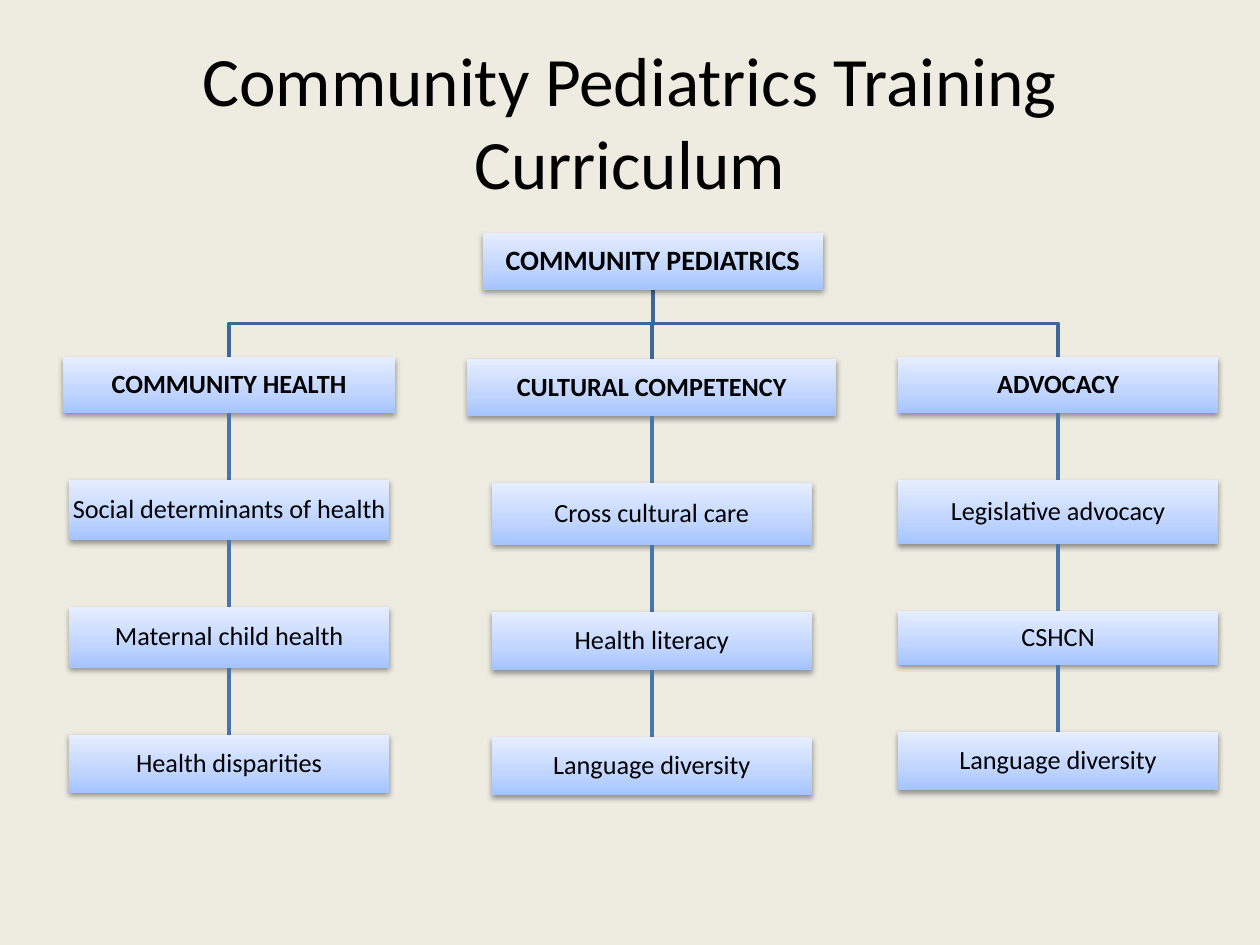
from dataclasses import dataclass

from lxml import etree
from pptx import Presentation
from pptx.dml.color import RGBColor
from pptx.enum.shapes import MSO_CONNECTOR as Link, MSO_SHAPE as Preset
from pptx.enum.text import MSO_ANCHOR as Anchor, PP_ALIGN as Align
from pptx.oxml import parse_xml
from pptx.oxml.ns import nsdecls, qn
from pptx.util import Cm, Pt


@dataclass(frozen=True)
class Theme:
    font: str = "Calibri"
    paper: str = "EEECE1"
    ink: str = "000000"
    branch: str = "3F6797"
    spine: str = "4875AC"
    gradient: tuple = ((0, "A4C4FF"), (35, "BFD4FF"), (100, "E6EEFF"))
    title_size: float = 39.6
    root_size: float = 16
    box_size: float = 15
    line_width: float = 2


class Chart:
    """Draws the parts of an organisation chart; lengths are in centimetres."""

    def __init__(self, page, theme):
        self.page, self.theme = page, theme
        page.background.fill.solid()
        page.background.fill.fore_color.rgb = RGBColor.from_string(theme.paper)

    def label(self, shape, text, size, bold=False, spacing=1.0, inset=None):
        frame = shape.text_frame
        settings = {"word_wrap": True, "vertical_anchor": Anchor.MIDDLE}
        if inset is not None:
            for side in ("left", "right", "top", "bottom"):
                settings[f"margin_{side}"] = Cm(inset)
        para = frame.paragraphs[0]
        span = para.add_run()
        formats = (
            (frame, settings),
            (para, {"alignment": Align.CENTER, "line_spacing": spacing}),
            (span, {"text": text}),
            (span.font, {"name": self.theme.font, "size": Pt(size), "bold": bold}),
            (span.font.color, {"rgb": RGBColor.from_string(self.theme.ink)}),
        )
        for target, values in formats:
            for name, value in values.items():
                setattr(target, name, value)

    def title(self, text, left, top, width, height):
        box = self.page.shapes.add_textbox(Cm(left), Cm(top), Cm(width), Cm(height))
        self.label(box, text, self.theme.title_size)

    def box(self, text, center, top, width, height, size, bold=False):
        box = self.page.shapes.add_shape(
            Preset.RECTANGLE, Cm(center - width / 2), Cm(top), Cm(width), Cm(height))
        box.line.fill.background()
        box.shadow.inherit = False
        self.shade(box)
        self.label(box, text, size, bold, spacing=0.9, inset=0.03)

    def shade(self, box):
        """Fill with the three-stop gradient and add a soft shadow below."""
        stops = "".join(
            f'<a:gs pos="{place * 1000}"><a:srgbClr val="{color}"/></a:gs>'
            for place, color in self.theme.gradient)
        properties = box.element.spPr
        properties.find(qn("a:prstGeom")).addnext(parse_xml(
            f'<a:gradFill {nsdecls("a")} rotWithShape="1"><a:gsLst>{stops}</a:gsLst>'
            '<a:lin ang="16200000" scaled="0"/></a:gradFill>'))
        properties.find(qn("a:effectLst")).append(parse_xml(
            f'<a:outerShdw {nsdecls("a")} blurRad="40000" dist="20000" dir="5400000" '
            'rotWithShape="0"><a:srgbClr val="000000"><a:alpha val="38000"/>'
            '</a:srgbClr></a:outerShdw>'))

    def stroke(self, shape, color):
        shape.line.color.rgb = RGBColor.from_string(color)
        shape.line.width = Pt(self.theme.line_width)

    def spine(self, x, start, end):
        line = self.page.shapes.add_connector(
            Link.STRAIGHT, Cm(x), Cm(start), Cm(x), Cm(end))
        self.stroke(line, self.theme.spine)
        etree.SubElement(line.element.spPr, qn("a:effectLst"))

    def branch(self, x, start, to_x, end):
        middle = (start + end) / 2
        builder = self.page.shapes.build_freeform(Cm(x), Cm(start), scale=1.0)
        points = ((x, middle), (to_x, middle), (to_x, end))
        builder.add_line_segments([(Cm(a), Cm(b)) for a, b in points], close=False)
        line = builder.convert_to_shape()
        line.fill.background()
        line.shadow.inherit = False
        self.stroke(line, self.theme.branch)


# Root box: text, center, top, width, height
ROOT = ("COMMUNITY PEDIATRICS", 13.16, 4.7, 6.86, 1.14)
GAP = 1.35
TOPIC_WIDTH = 6.45

# Columns: center, top, heading width, then (text, height) from heading down
COLUMNS = (
    (4.62, 7.2, 6.68, (("COMMUNITY HEALTH", 1.13),
                       ("Social determinants of health", 1.21),
                       ("Maternal child health", 1.22),
                       ("Health disparities", 1.17))),
    (13.14, 7.24, 7.44, (("CULTURAL COMPETENCY", 1.15),
                         ("Cross cultural care", 1.24),
                         ("Health literacy", 1.18),
                         ("Language diversity", 1.17))),
    (21.33, 7.2, TOPIC_WIDTH, (("ADVOCACY", 1.13),
                               ("Legislative advocacy", 1.29),
                               ("CSHCN", 1.08),
                               ("Language diversity", 1.18))),
)


def main():
    deck = Presentation()
    deck.slide_width, deck.slide_height = Cm(25.4), Cm(19.05)
    theme = Theme()
    chart = Chart(deck.slides.add_slide(deck.slide_layouts[6]), theme)

    chart.title("Community Pediatrics Training Curriculum", 1.9, 0.83, 21.59, 3.18)

    # Branches from the root to each column
    _, root_center, root_top, _, root_height = ROOT
    for center, top, _, _ in COLUMNS:
        chart.branch(root_center, root_top + root_height, center, top)
    chart.box(*ROOT, size=theme.root_size, bold=True)

    # Columns: a heading, then topics joined by short lines
    for center, top, heading_width, entries in COLUMNS:
        for level, (text, height) in enumerate(entries):
            heading = level == 0
            if not heading:
                chart.spine(center, top - GAP, top)
            width = heading_width if heading else TOPIC_WIDTH
            chart.box(text, center, top, width, height, theme.box_size, heading)
            top += height + GAP

    deck.save("out.pptx")


if __name__ == "__main__":
    main()
